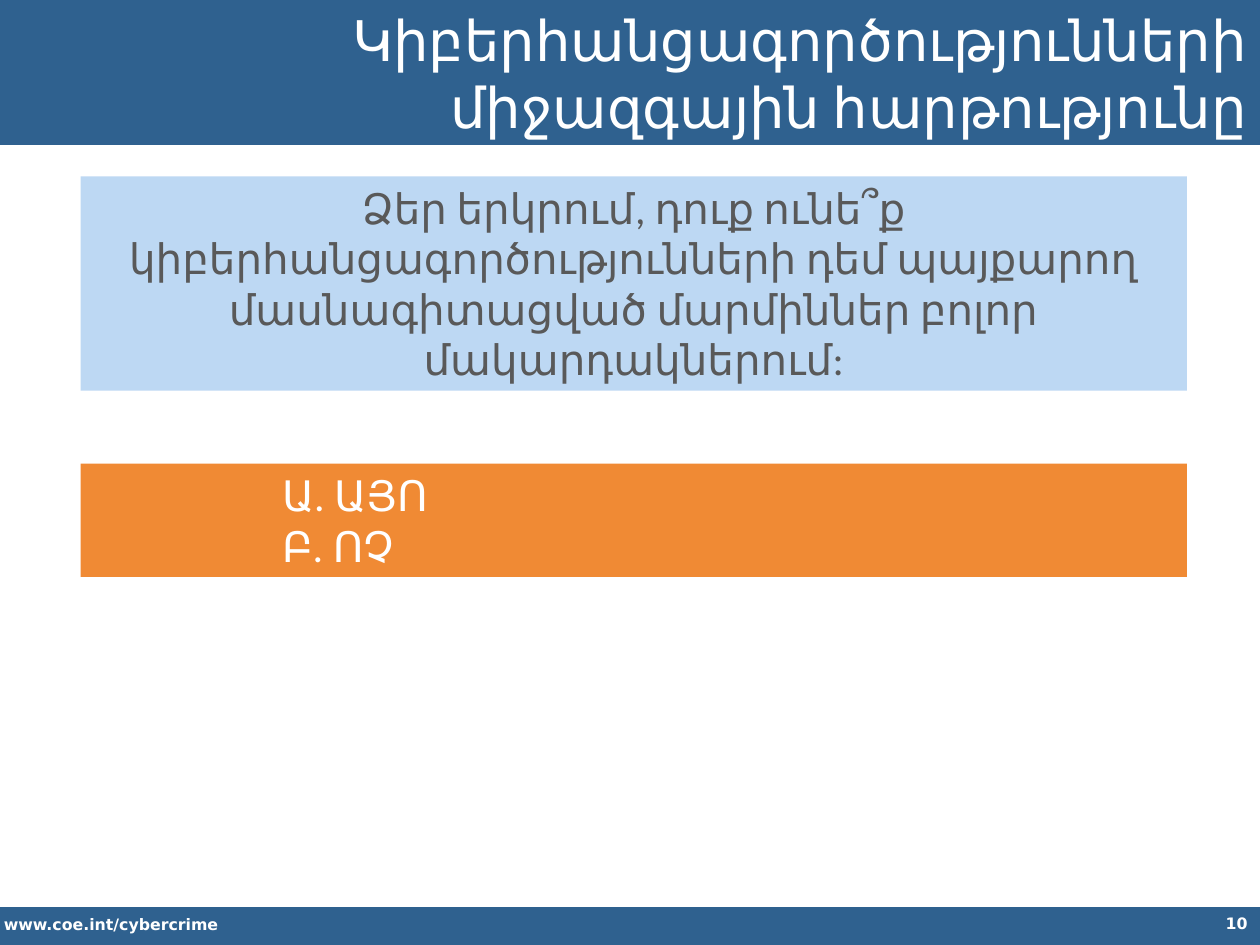
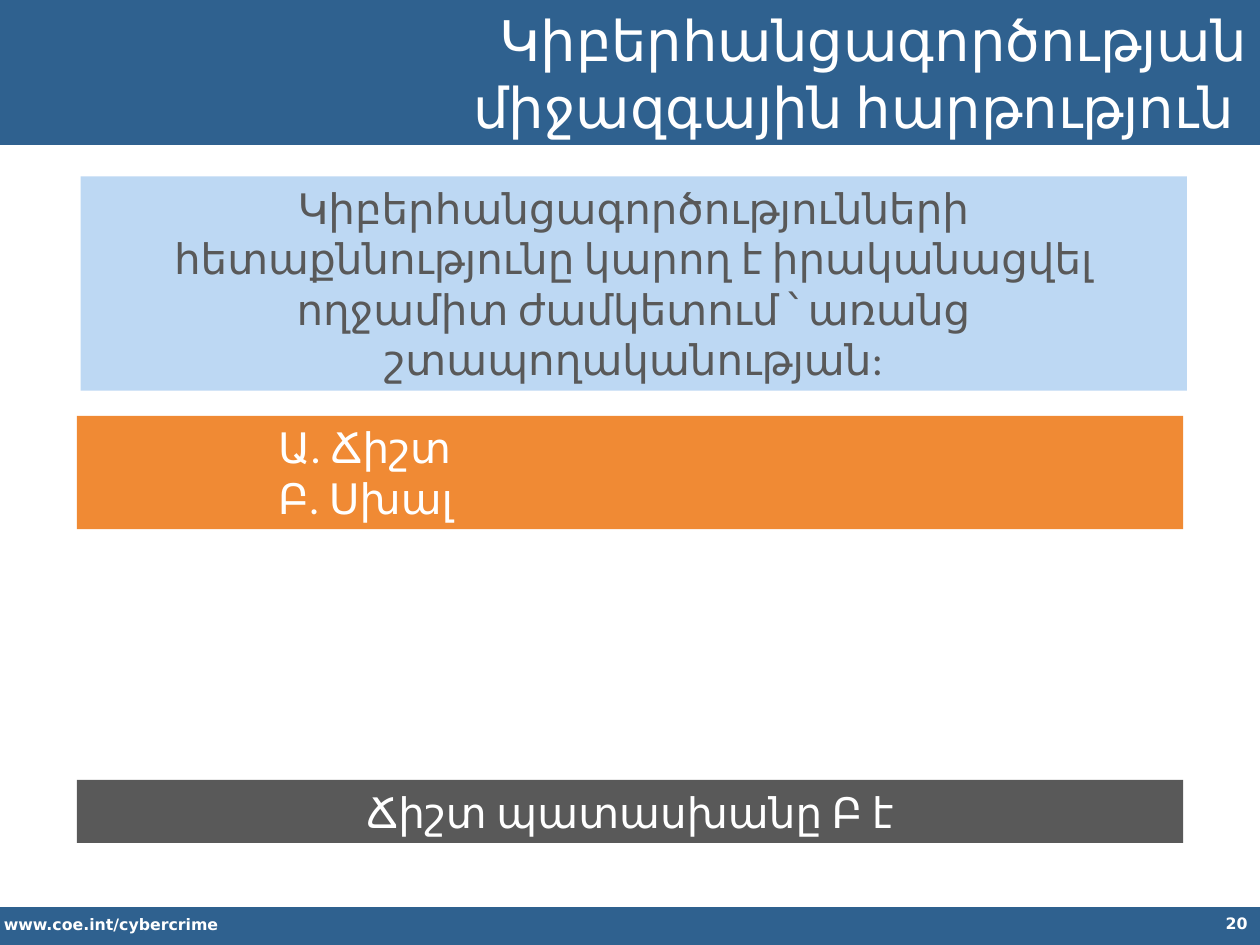
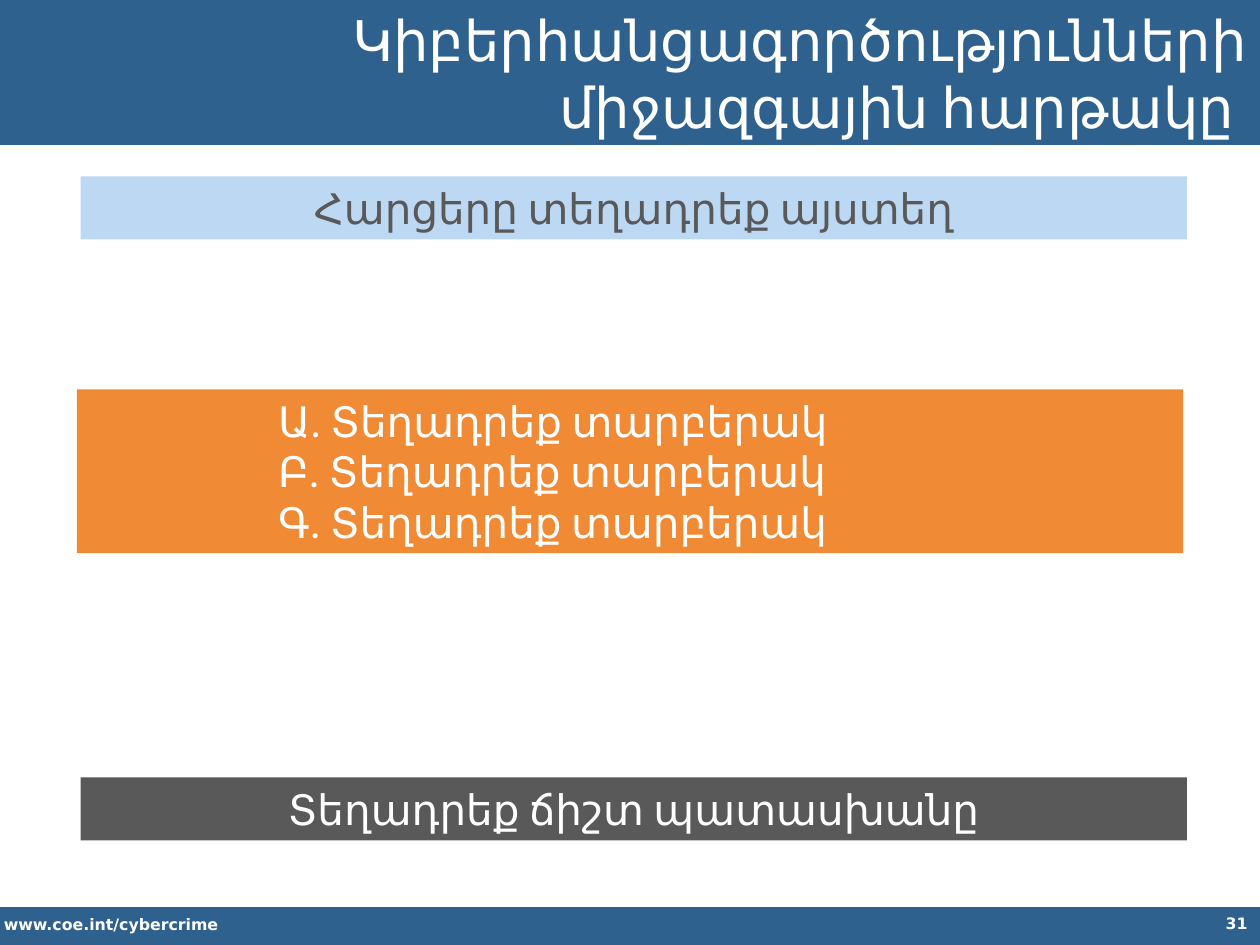
"""Builds three quiz slides on the international dimension of cybercrime."""
from dataclasses import dataclass

from pptx import Presentation
from pptx.dml.color import RGBColor
from pptx.enum.shapes import MSO_SHAPE
from pptx.enum.text import MSO_ANCHOR, MSO_AUTO_SIZE, PP_ALIGN
from pptx.util import Inches, Pt

RECTANGLE = MSO_SHAPE.RECTANGLE
TOP, MIDDLE = MSO_ANCHOR.TOP, MSO_ANCHOR.MIDDLE
LEFT, CENTER, RIGHT = PP_ALIGN.LEFT, PP_ALIGN.CENTER, PP_ALIGN.RIGHT
FIXED, GROW = MSO_AUTO_SIZE.NONE, MSO_AUTO_SIZE.SHAPE_TO_FIT_TEXT
TITLE_ONLY = 5


@dataclass(frozen=True)
class Theme:
    """Colours, fonts and type sizes of the deck."""
    band: RGBColor = RGBColor(0x2F, 0x61, 0x8F)
    question: RGBColor = RGBColor(0xBD, 0xD8, 0xF3)
    options: RGBColor = RGBColor(0xF0, 0x8A, 0x34)
    dark: RGBColor = RGBColor(0x59, 0x59, 0x59)
    white: RGBColor = RGBColor(0xFF, 0xFF, 0xFF)
    text_font: str = "Calibri"
    footer_font: str = "DejaVu Sans"
    title_size: int = 32
    body_size: int = 24
    footer_size: int = 9


class QuizDeck:
    """Holds the theme and the current page, and draws each kind of element."""

    box_width = 8.78
    line_height = 0.4
    box_padding = 0.1
    option_indent = 1.5

    def __init__(self, theme):
        """Start an empty deck."""
        self.theme = theme
        self.deck = Presentation()
        self.deck.slide_width, self.deck.slide_height = Inches(10), Inches(7.5)
        self.page = None

    def add_page(self, title, number):
        """Add a page with its bands, title and footer."""
        self.page = self.deck.slides.add_slide(self.deck.slide_layouts[TITLE_ONLY])
        header = self.rectangle(0, 0, 10, 1.15, self.theme.band)
        self.rectangle(0, 7.2, 10, 0.3, self.theme.band)
        self.title(title, header)
        self.footer_text("www.coe.int/cybercrime", 0, 7.21, 3.45, LEFT)
        self.footer_text(str(number), 7.67, 7.2, 2.33, RIGHT, 0.1)

    def rectangle(self, left, top, width, height, color):
        """Draw a plain filled rectangle."""
        box = self.page.shapes.add_shape(
            RECTANGLE, Inches(left), Inches(top), Inches(width), Inches(height))
        box.shadow.inherit = False
        box.fill.solid()
        box.fill.fore_color.rgb = color
        box.line.fill.background()
        return box

    def fill_text(self, box, lines, font, color, align, **frame_format):
        """Put one paragraph per line into a box."""
        frame = box.text_frame
        for name, value in {"word_wrap": True, **frame_format}.items():
            setattr(frame, name, value)
        frame.text = "\n".join(lines)
        for para in frame.paragraphs:
            para.alignment = align
            for span in para.runs:
                for name, value in font.items():
                    setattr(span.font, name, value)
                span.font.color.rgb = color

    def title(self, text, header):
        """Place the title over the header band."""
        box = self.page.shapes.title
        header.element.addnext(box.element)
        place = {"left": 2.2, "top": 0.07, "width": 7.8, "height": 1.01}
        for name, value in place.items():
            setattr(box, name, Inches(value))
        font = {"name": self.theme.text_font, "size": Pt(self.theme.title_size)}
        self.fill_text(box, [text], font, self.theme.white, RIGHT,
                       vertical_anchor=MIDDLE, auto_size=FIXED)

    def footer_text(self, text, left, top, width, align, margin=0.03):
        """Put a small bold text on the footer band."""
        box = self.page.shapes.add_textbox(
            Inches(left), Inches(top), Inches(width), Inches(0.25))
        font = {"name": self.theme.footer_font, "bold": True,
                "size": Pt(self.theme.footer_size)}
        self.fill_text(box, [text], font, self.theme.white, align,
                       margin_left=Inches(margin))

    def text_box(self, lines, left, top, rows, fill, color, align=CENTER):
        """Draw a filled box as tall as its rows of text."""
        height = rows * self.line_height + self.box_padding
        box = self.rectangle(left, top, self.box_width, height, fill)
        font = {"name": self.theme.text_font, "size": Pt(self.theme.body_size)}
        self.fill_text(box, lines, font, color, align,
                       vertical_anchor=TOP, auto_size=GROW)
        return box

    def question(self, text, rows):
        """Draw the question box."""
        self.text_box([text], 0.64, 1.4, rows, self.theme.question, self.theme.dark)

    def options(self, choices, left, top):
        """Draw the lettered answer options."""
        lines = [f"{letter}. {choice}" for letter, choice in zip("ԱԲԳ", choices)]
        box = self.text_box(lines, left, top, len(lines),
                            self.theme.options, self.theme.white, LEFT)
        for para in box.text_frame.paragraphs:
            para.level = 3
            properties = para._p.get_or_add_pPr()
            properties.set("marL", str(Inches(self.option_indent)))
            properties.set("indent", "0")

    def answer(self, text, left, top):
        """Draw the correct answer box."""
        self.text_box([text], left, top, 1, self.theme.dark, self.theme.white)


def main():
    """Build and save the deck."""
    quiz = QuizDeck(Theme())

    quiz.add_page("Կիբերհանցագործությունների միջազգային հարթությունը", 10)
    quiz.question("Ձեր երկրում, դուք ունե՞ք կիբերհանցագործությունների դեմ պայքարող "
                  "մասնագիտացված մարմիններ բոլոր մակարդակներում:", 4)
    quiz.options(["ԱՅՈ", "ՈՉ"], 0.64, 3.68)

    quiz.add_page("Կիբերհանցագործության միջազգային հարթություն ", 20)
    quiz.question("Կիբերհանցագործությունների հետաքննությունը կարող է իրականացվել "
                  "ողջամիտ ժամկետում ՝ առանց շտապողականության:", 4)
    quiz.answer("Ճիշտ պատասխանը Բ է", 0.61, 6.19)
    quiz.options(["Ճիշտ", "Սխալ"], 0.61, 3.3)

    quiz.add_page("Կիբերհանցագործությունների միջազգային հարթակը ", 31)
    quiz.question("Հարցերը տեղադրեք այստեղ", 1)
    quiz.answer("Տեղադրեք ճիշտ պատասխանը", 0.64, 6.17)
    quiz.options(["Տեղադրեք տարբերակ"] * 3, 0.61, 3.09)

    quiz.deck.save("out.pptx")


if __name__ == "__main__":
    main()
